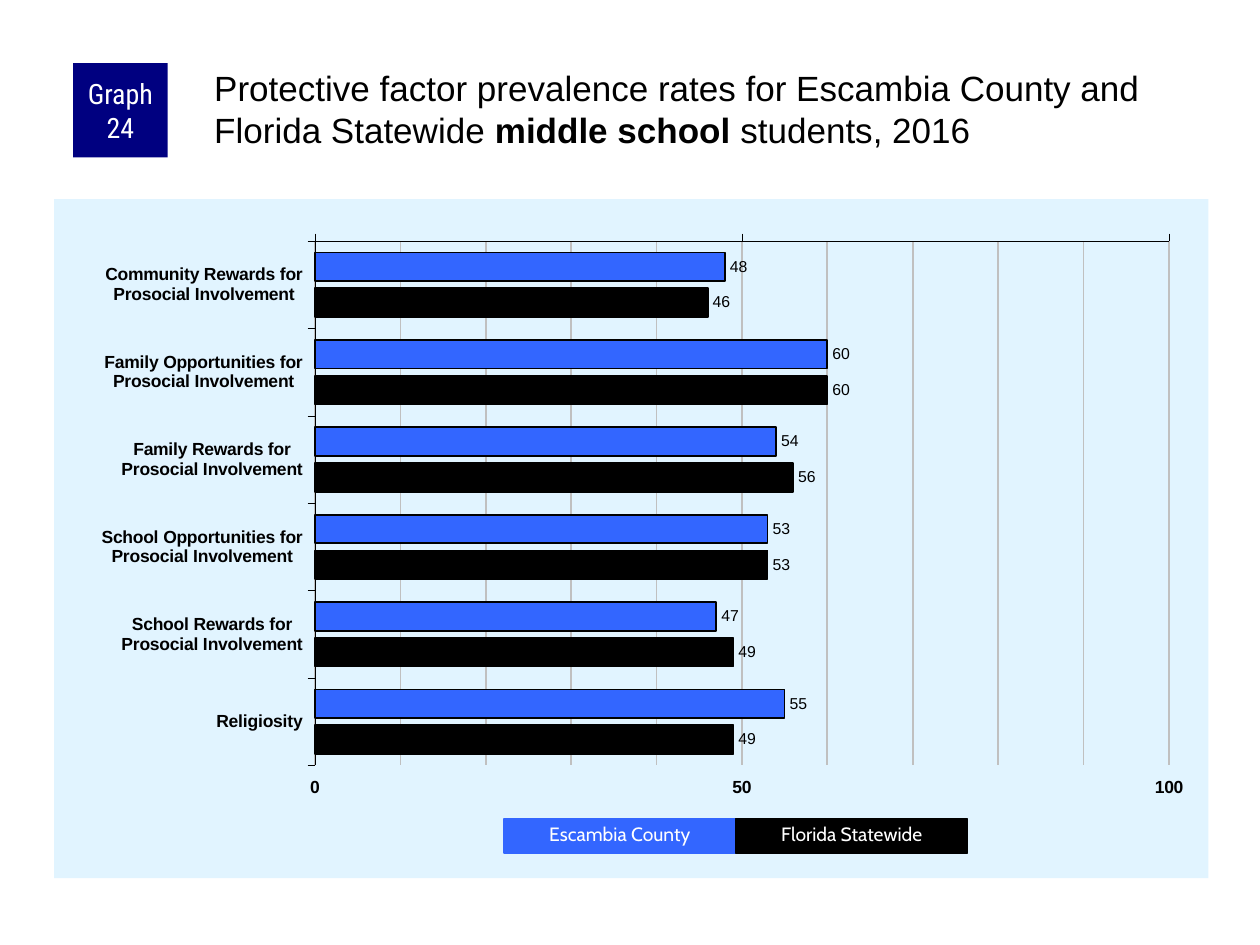
from copy import deepcopy

from lxml import etree
from pptx import Presentation
from pptx.chart.data import CategoryChartData
from pptx.dml.color import RGBColor
from pptx.enum import chart as ch, shapes, text
from pptx.oxml import parse_xml
from pptx.oxml.ns import nsdecls, qn
from pptx.util import Inches, Pt

BLUE, BLACK, WHITE = "3366FF", "000000", "FFFFFF"
CATEGORIES = [
    "Community Rewards for\nProsocial Involvement",
    "Family Opportunities for\nProsocial Involvement",
    "Family Rewards for\nProsocial Involvement",
    "School Opportunities for\nProsocial Involvement",
    "School Rewards for\nProsocial Involvement",
    "Religiosity",
]
SERIES = [
    ("Escambia County", BLUE, [48, 60, 54, 53, 47, 55]),
    ("Florida Statewide", BLACK, [46, 60, 56, 53, 49, 49]),
]


def rgb(color):
    return RGBColor.from_string(color)


def set_font(font, name, size, color, bold=False):
    font.name, font.size, font.bold = name, Pt(size), bold
    font.color.rgb = rgb(color)


def set_line(line, color, width):
    line.color.rgb = rgb(color)
    line.width = Pt(width)


def add_run(paragraph, content, name, size, color, bold=False):
    run = paragraph.add_run()
    run.text = content
    set_font(run.font, name, size, color, bold)


def add_label_box(slide, box, content, fill, font_name, size):
    """Add a filled rectangle with centred white text."""
    shape = slide.shapes.add_shape(
        shapes.MSO_SHAPE.RECTANGLE, *map(Inches, box))
    shape.shadow.inherit = False
    shape.fill.solid()
    shape.fill.fore_color.rgb = rgb(fill)
    shape.line.fill.background()
    shape.text_frame.word_wrap = True
    paragraph = shape.text_frame.paragraphs[0]
    paragraph.alignment = text.PP_ALIGN.CENTER
    add_run(paragraph, content, font_name, size, WHITE)
    return shape


def add_badge(slide, box):
    frame = add_label_box(
        slide, box, "Graph 24", "000080", "Roboto Condensed", 16).text_frame
    frame.margin_left = frame.margin_right = Inches(0.05)
    frame.margin_top = frame.margin_bottom = 0
    frame.vertical_anchor = text.MSO_ANCHOR.MIDDLE


def add_title(slide, box):
    frame = slide.shapes.add_textbox(*map(Inches, box)).text_frame
    frame.word_wrap = True
    frame.margin_left = frame.margin_top = Inches(0.03)
    frame.margin_right = frame.margin_bottom = 0
    for content, bold in [
        ("Protective factor prevalence rates for Escambia County "
         "and Florida Statewide ", False),
        ("middle school ", True),
        ("students, 2016", False),
    ]:
        add_run(frame.paragraphs[0], content, "Arial", 20, BLACK, bold)


def add_legend(slide, box):
    left, top, width, height = box
    key_width = width / len(SERIES)
    for index, (name, color, _) in enumerate(SERIES):
        key = add_label_box(
            slide, (left + index * key_width, top, key_width, height),
            name, color, "Cabin", 11)
        set_line(key.line, color, 0.75)
        key.text_frame.vertical_anchor = text.MSO_ANCHOR.TOP
        key.text_frame.auto_size = text.MSO_AUTO_SIZE.SHAPE_TO_FIT_TEXT
        key.text_frame.paragraphs[0].line_spacing = 0.9


def set_plot_layout(chart, left, top, width, height):
    """Fix the inner plot area, in fractions of the chart."""
    plot_area = chart._chartSpace.chart.plotArea
    for old in plot_area.findall(qn("c:layout")):
        plot_area.remove(old)
    layout = parse_xml(f"<c:layout {nsdecls('c')}><c:manualLayout/></c:layout>")
    settings = [("layoutTarget", "inner"), ("xMode", "edge"), ("yMode", "edge"),
                ("x", left), ("y", top), ("w", width), ("h", height)]
    for tag, value in settings:
        etree.SubElement(layout[0], qn(f"c:{tag}")).set("val", str(value))
    plot_area.insert(0, layout)
    plot_area.append(parse_xml(
        f"<c:spPr {nsdecls('c', 'a')}><a:noFill/></c:spPr>"))


def set_chart_background(chart, color):
    chart._chartSpace.find(qn("c:txPr")).addprevious(parse_xml(
        f"<c:spPr {nsdecls('c', 'a')}><a:solidFill><a:srgbClr val='{color}'/>"
        "</a:solidFill><a:ln><a:noFill/></a:ln></c:spPr>"))


def format_gridlines(axis, color, width):
    """Give major and minor gridlines the same line."""
    axis.has_major_gridlines = axis.has_minor_gridlines = True
    set_line(axis.major_gridlines.format.line, color, width)
    major = axis._element.find(qn("c:majorGridlines"))
    minor = axis._element.find(qn("c:minorGridlines"))
    minor.append(deepcopy(major.find(qn("c:spPr"))))


def format_axes(chart):
    for axis in (chart.category_axis, chart.value_axis):
        set_font(axis.tick_labels.font, "Arial", 10, BLACK, True)
        set_line(axis.format.line, BLACK, 0.25)
        axis.major_tick_mark = ch.XL_TICK_MARK.OUTSIDE
        axis.minor_tick_mark = ch.XL_TICK_MARK.NONE
    chart.category_axis.reverse_order = True
    values = chart.value_axis
    values.minimum_scale, values.maximum_scale = 0, 100
    values.major_unit, values.minor_unit = 50, 10
    values.tick_label_position = ch.XL_TICK_LABEL_POSITION.HIGH
    format_gridlines(values, "C0C0C0", 1)


def add_rates_chart(slide, box):
    data = CategoryChartData()
    data.categories = CATEGORIES
    for name, _, rates in SERIES:
        data.add_series(name, rates)
    chart = slide.shapes.add_chart(
        ch.XL_CHART_TYPE.BAR_CLUSTERED, *map(Inches, box), data).chart
    chart.has_legend = chart.has_title = False
    set_font(chart.font, "Arial", 11.8, BLACK)
    set_chart_background(chart, "E1F4FF")
    set_plot_layout(chart, 0.226, 0.062, 0.74, 0.772)
    format_axes(chart)
    plot = chart.plots[0]
    plot.gap_width, plot.overlap = 80, -25
    plot.vary_by_categories = False
    for series, (_, color, _) in zip(plot.series, SERIES):
        series.invert_if_negative = False
        series.format.fill.solid()
        series.format.fill.fore_color.rgb = rgb(color)
        set_line(series.format.line, BLACK, 1)
        labels = series.data_labels
        labels.show_value = True
        labels.position = ch.XL_LABEL_POSITION.OUTSIDE_END
        set_font(labels.font, "Arial", 9, BLACK)


def main():
    presentation = Presentation()
    presentation.slide_width = Inches(10)
    presentation.slide_height = Inches(7.5)
    slide = presentation.slides.add_slide(presentation.slide_layouts[6])
    add_rates_chart(slide, (0.43, 1.58, 9.16, 5.39))
    add_badge(slide, (0.58, 0.5, 0.75, 0.75))
    add_title(slide, (1.67, 0.5, 7.92, 0.83))
    add_legend(slide, (4, 6.5, 3.68, 0.27))
    presentation.save("out.pptx")


if __name__ == "__main__":
    main()
